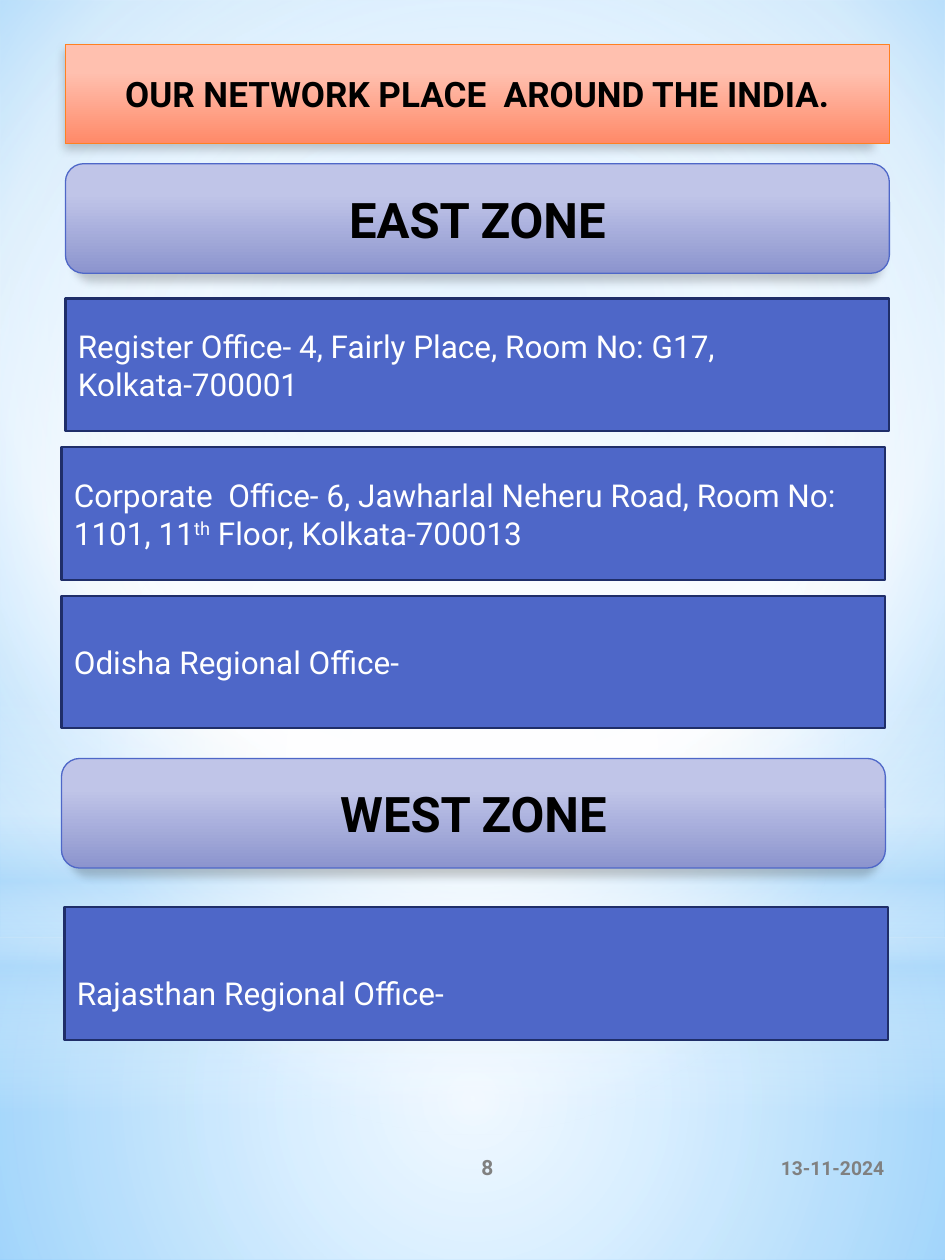
from pptx import Presentation
from pptx import util as u
from pptx.dml.color import RGBColor
from pptx.enum import shapes, text
from pptx.oxml import parse_xml
from pptx.oxml.ns import nsdecls

Cm, Pt = u.Cm, u.Pt
FONT = "Roboto"
BLACK, WHITE = RGBColor(0, 0, 0), RGBColor(255, 255, 255)
GREY = RGBColor(0x80, 0x80, 0x80)
BLUE, NAVY = RGBColor(0x4E, 0x67, 0xC8), RGBColor(0x1F, 0x2E, 0x69)
ORANGE = RGBColor(0xFF, 0x80, 0x21)
SKY, SKY_DEEP = RGBColor(0x9E, 0xD5, 0xFF), RGBColor(0x5B, 0xB9, 0xFF)
PALE_SKY = RGBColor(0xB4, 0xDC, 0xFA)
LAVENDER = [(28, RGBColor(0xC0, 0xC5, 0xE8)), (100, RGBColor(0x8C, 0x94, 0xCE))]
SALMON = [(28, RGBColor(0xFF, 0xC0, 0xAF)), (100, RGBColor(0xFF, 0x89, 0x68))]

# Content: runs are (text, is superscript); positions in cm
TITLE = "OUR NETWORK PLACE  AROUND THE INDIA."
ZONES = [("EAST ZONE", 1.32, 3.3), ("WEST ZONE", 1.24, 15.29)]
OFFICES = [  # runs, left, top, extra top inset
    ([("Register Office- 4, Fairly Place, Room No: G17, Kolkata-700001", False)],
     1.32, 6.02, 0),
    ([("Corporate  Office- 6, Jawharlal Neheru Road, Room No: 1101, 11", False),
      ("th", True), (" Floor, Kolkata-700013", False)], 1.24, 9.02, 0),
    ([("Odisha Regional Office-", False)], 1.24, 12.01, 0),
    ([("Rajasthan Regional Office-", False)], 1.3, 18.29, 0.76),
]
FOOTERS = [  # text, left, width, size, alignment
    ("13-11-2024", 12.85, 5.23, 11, text.PP_ALIGN.RIGHT),
    ("8", 7.92, 3.81, 12, text.PP_ALIGN.CENTER),
]
PAGE_WIDTH, PAGE_HEIGHT, BOX_WIDTH = 19.05, 25.4, 16.61
CENTRE = (50, 50, 50, 50)
RECTANGLE, OVAL = shapes.MSO_SHAPE.RECTANGLE, shapes.MSO_SHAPE.OVAL
GLOWS = [  # preset, top, height, stops (position, colour, opacity), focus
    (RECTANGLE, 18.9, 6.5, [(0, WHITE, 91), (37, WHITE, 76), (100, PALE_SKY, 79)], CENTRE),
    (RECTANGLE, 0, 18.9, [(0, WHITE, 89), (48, WHITE, 62), (100, PALE_SKY, 79)], CENTRE),
    (RECTANGLE, 13.94, 8.46, [(0, WHITE, 0), (29, WHITE, 30), (45, PALE_SKY, 40),
                              (55, WHITE, 26), (65, PALE_SKY, 60), (100, WHITE, 0)], None),
    (OVAL, 5.92, 18.9, [(0, WHITE, 100), (56, WHITE, 0)], CENTRE),
]


def set_gradient(fill, element, stops, focus=None):
    """Top-to-bottom gradient, or a circular one around the focus rectangle."""
    fill.gradient()
    fill.gradient_angle = 270
    gradient = element.xpath(".//a:gradFill")[0]
    stop_xml = "".join(
        f'<a:gs pos="{position * 1000}"><a:srgbClr val="{color}">'
        f'<a:alpha val="{(opacity or [100])[0] * 1000}"/></a:srgbClr></a:gs>'
        for position, color, *opacity in stops)
    gradient.replace(gradient.xpath("a:gsLst")[0],
                     parse_xml(f'<a:gsLst {nsdecls("a")}>{stop_xml}</a:gsLst>'))
    if focus:
        left, top, right, bottom = (side * 1000 for side in focus)
        gradient.replace(gradient.xpath("a:lin")[0], parse_xml(
            f'<a:path {nsdecls("a")} path="circle"><a:fillToRect l="{left}" '
            f't="{top}" r="{right}" b="{bottom}"/></a:path>'))


def set_shadow(shape):
    shape.shadow.inherit = False
    shape._element.spPr.xpath("a:effectLst")[0].append(parse_xml(
        f'<a:outerShdw {nsdecls("a")} blurRad="{Pt(5)}" dist="{Pt(4)}" dir="5400000" '
        'sx="98000" sy="98000" rotWithShape="0"><a:srgbClr val="000000">'
        '<a:alpha val="20000"/></a:srgbClr></a:outerShdw>'))


def set_line(shape, color, width):
    shape.line.color.rgb = color
    shape.line.width = Pt(width)


def write(shape, runs, size, color, bold, alignment):
    frame = shape.text_frame
    frame.word_wrap = True
    frame.auto_size = text.MSO_AUTO_SIZE.NONE
    frame.vertical_anchor = text.MSO_ANCHOR.MIDDLE
    paragraph = frame.paragraphs[0]
    paragraph.alignment = alignment
    for words, superscript in runs:
        run = paragraph.add_run()
        run.text = words
        font = run.font
        font.name, font.size, font.bold = FONT, Pt(size), bold
        font.color.rgb = color
        if superscript:
            run._r.get_or_add_rPr().set("baseline", "30000")


def add_shape(slide, preset, left, top, width, height):
    shape = slide.shapes.add_shape(preset, Cm(left), Cm(top), Cm(width), Cm(height))
    shape.shadow.inherit = False
    return shape


def main():
    presentation = Presentation()
    presentation.slide_width, presentation.slide_height = Cm(PAGE_WIDTH), Cm(PAGE_HEIGHT)
    slide = presentation.slides.add_slide(presentation.slide_layouts[5])

    # Background and soft glows
    set_gradient(slide.background.fill, slide._element,
                 [(0, SKY), (60, WHITE), (100, SKY_DEEP)], (20, 10, 20, 60))
    for preset, top, height, stops, focus in GLOWS:
        glow = add_shape(slide, preset, 0, top, PAGE_WIDTH, height)
        set_gradient(glow.fill, glow._element, stops, focus)
        glow.line.fill.background()

    # Date and page number
    for words, left, width, size, alignment in FOOTERS:
        box = slide.shapes.add_textbox(Cm(left), Cm(22.86), Cm(width), Cm(1.35))
        write(box, [(words, False)], size, GREY, True, alignment)

    # Zone headings
    for name, left, top in ZONES:
        zone = add_shape(slide, shapes.MSO_SHAPE.ROUNDED_RECTANGLE,
                         left, top, BOX_WIDTH, 2.21)
        set_gradient(zone.fill, zone._element, LAVENDER)
        set_line(zone, BLUE, 0.75)
        set_shadow(zone)
        write(zone, [(name, False)], 28, BLACK, True, text.PP_ALIGN.CENTER)

    # Office addresses
    for runs, left, top, inset in OFFICES:
        office = add_shape(slide, RECTANGLE, left, top, BOX_WIDTH, 2.67)
        office.fill.solid()
        office.fill.fore_color.rgb = BLUE
        set_line(office, NAVY, 1.25)
        office.text_frame.margin_top = Cm(0.13 + inset)
        write(office, runs, 18, WHITE, False, text.PP_ALIGN.LEFT)

    # Title, brought in front of the glows
    title = slide.shapes.title
    title.left, title.top = Cm(1.32), Cm(0.89)
    title.width, title.height = Cm(BOX_WIDTH), Cm(2.01)
    set_gradient(title.fill, title._element, SALMON)
    set_line(title, ORANGE, 0.75)
    set_shadow(title)
    write(title, [(TITLE, False)], 20, BLACK, True, text.PP_ALIGN.CENTER)
    slide.shapes._spTree.append(title._element)

    presentation.save("out.pptx")


if __name__ == "__main__":
    main()
